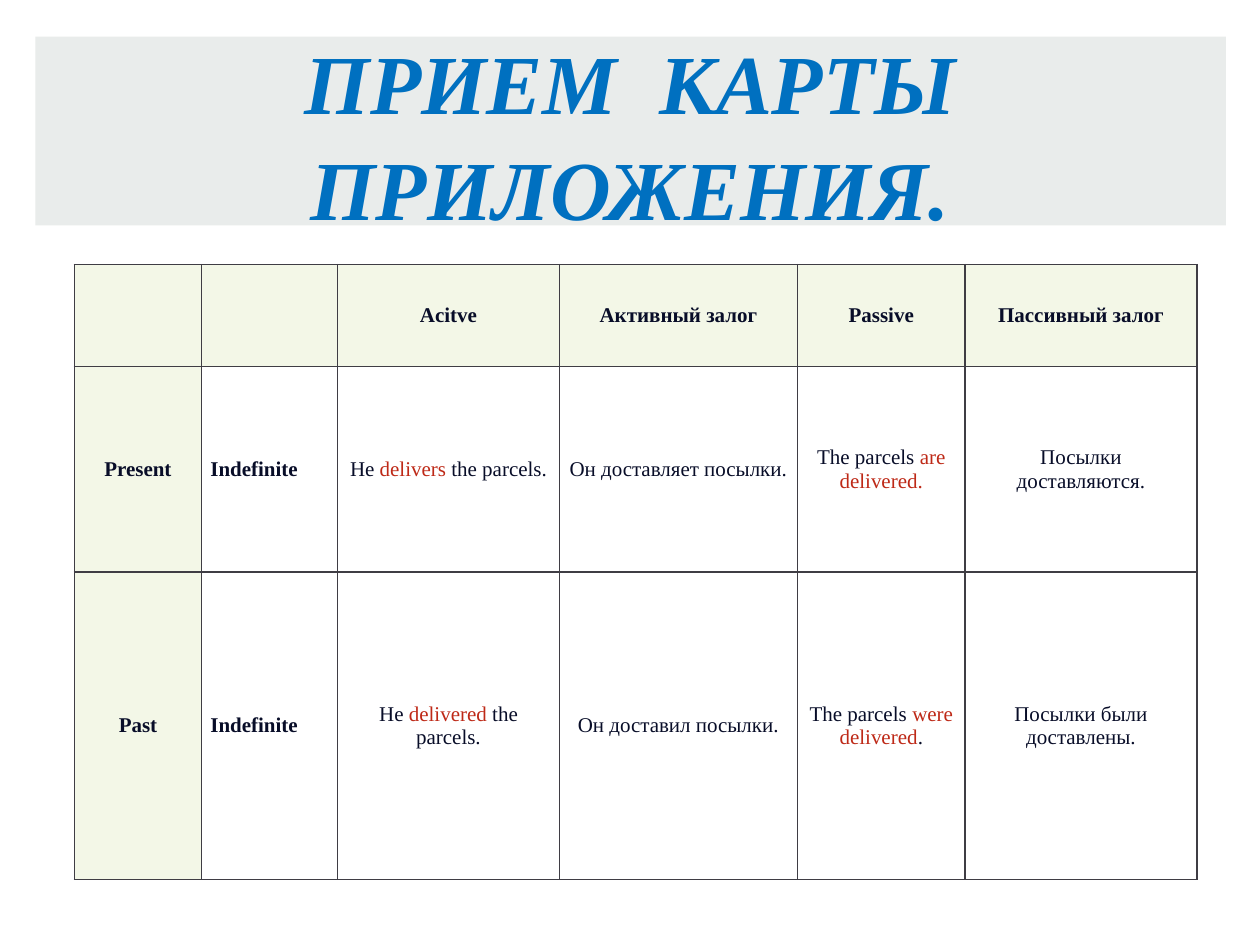
from dataclasses import dataclass

from lxml.etree import SubElement
from pptx import Presentation
from pptx.dml.color import RGBColor
from pptx.enum.shapes import MSO_SHAPE as Shape
from pptx.enum.text import MSO_ANCHOR as Anchor, PP_ALIGN as Align
from pptx.oxml.ns import qn
from pptx.util import Inches, Pt

BLUE = RGBColor(0x00, 0x70, 0xC0)
GREY = RGBColor(0xE9, 0xEC, 0xEB)
GREEN = RGBColor(0xF3, 0xF7, 0xE7)
NAVY = RGBColor(0x08, 0x0D, 0x28)
RED = RGBColor(0xBE, 0x29, 0x17)
EDGE = RGBColor(0x3F, 0x3D, 0x44)
FONT = "Times New Roman"


@dataclass
class Row:
    high: float
    cells: tuple[str, ...]


COLS = (1.01, 1.08, 1.76, 1.89, 1.33, 1.84)
ROWS = (
    Row(0.81, ("", "", "Acitve", "Активный залог", "Passive", "Пассивный залог")),
    Row(1.63, ("Present", "Indefinite", "He |delivers| the parcels.",
               "Он доставляет посылки.", "The parcels |are delivered.",
               "Посылки доставляются.")),
    Row(2.44, ("Past", "Indefinite", "He |delivered| the parcels.",
               "Он доставил посылки.", "The parcels |were delivered|.",
               "Посылки были доставлены.")),
)


def write(frame, text: str, *, size: float = 12, color: RGBColor = NAVY,
          bold: bool = False, italic: bool = False,
          align: Align = Align.CENTER, space: float | None = None) -> None:
    frame.word_wrap = True
    para = frame.paragraphs[0]
    para.alignment = align
    para.line_spacing = space
    for i, part in enumerate(text.split("|")):
        run = para.add_run()
        run.text = part
        font = run.font
        font.name, font.size = FONT, Pt(size)
        font.bold, font.italic = bold, italic
        font.color.rgb = RED if i % 2 else color


def edge(cell) -> None:
    props = cell._tc.get_or_add_tcPr()
    for i, side in enumerate(("lnL", "lnR", "lnT", "lnB")):
        line = props.makeelement(qn(f"a:{side}"), {"w": str(Pt(1))})
        fill = SubElement(line, qn("a:solidFill"))
        SubElement(fill, qn("a:srgbClr"), val=str(EDGE))
        props.insert(i, line)


def title(slide, text: str) -> None:
    box = slide.shapes.add_shape(Shape.RECTANGLE, Inches(0.28), Inches(0.29),
                                 Inches(9.45), Inches(1.5))
    box.shadow.inherit = False
    box.fill.solid()
    box.fill.fore_color.rgb = GREY
    box.line.fill.background()
    box.text_frame.vertical_anchor = Anchor.MIDDLE
    write(box.text_frame, text, size=48, color=BLUE, bold=True, italic=True,
          space=1.05)


def grid(slide, rows: tuple[Row, ...]) -> None:
    table = slide.shapes.add_table(
        len(rows), len(COLS), Inches(0.59), Inches(2.1),
        Inches(sum(COLS)), Inches(sum(row.high for row in rows))).table
    for col, wide in zip(table.columns, COLS):
        col.width = Inches(wide)
    for r, row in enumerate(rows):
        table.rows[r].height = Inches(row.high)
        for c, text in enumerate(row.cells):
            cell = table.cell(r, c)
            cell.vertical_anchor = Anchor.MIDDLE
            cell.margin_left = cell.margin_right = Inches(0.07)
            cell.margin_top = cell.margin_bottom = 0
            if r == 0 or c == 0:
                cell.fill.solid()
                cell.fill.fore_color.rgb = GREEN
            else:
                cell.fill.background()
            edge(cell)
            if text:
                write(cell.text_frame, text, bold=r == 0 or c < 2,
                      align=Align.LEFT if c == 1 else Align.CENTER)


def main() -> None:
    deck = Presentation()
    deck.slide_width, deck.slide_height = Inches(10), Inches(7.5)
    slide = deck.slides.add_slide(deck.slide_layouts[6])
    title(slide, "ПРИЕМ  КАРТЫ ПРИЛОЖЕНИЯ.")
    grid(slide, ROWS)
    deck.save("out.pptx")


if __name__ == "__main__":
    main()
